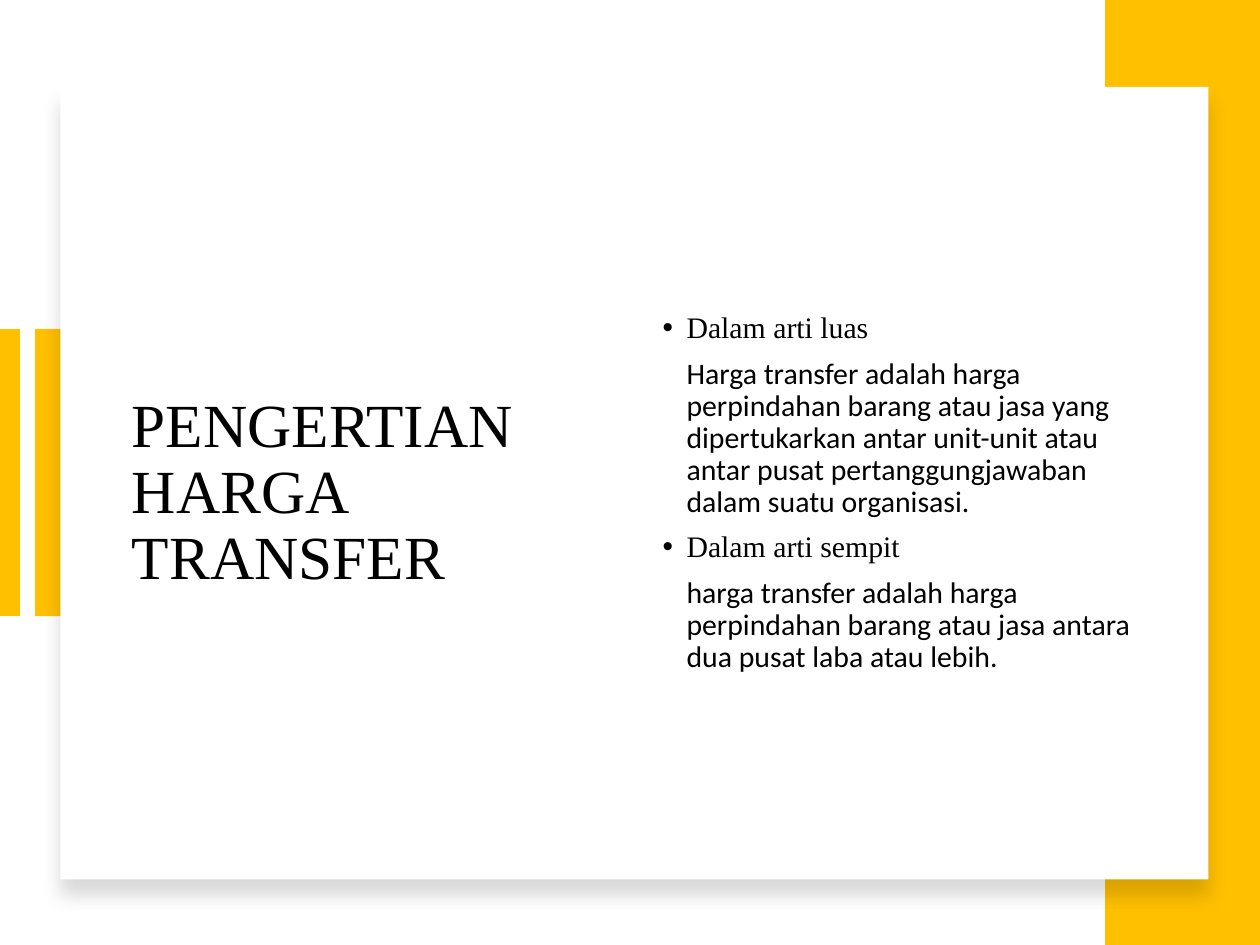
from lxml.etree import SubElement
from pptx import Presentation
from pptx.dml.color import RGBColor
from pptx.enum.shapes import MSO_CONNECTOR, MSO_SHAPE
from pptx.enum.text import MSO_ANCHOR
from pptx.oxml.ns import qn
from pptx.util import Cm, Pt

AMBER = RGBColor(0xFF, 0xC0, 0x00)
WHITE = RGBColor(0xFF, 0xFF, 0xFF)
BLACK = RGBColor(0x00, 0x00, 0x00)
SERIF, SANS = "Times New Roman", "Calibri"

TITLE = "PENGERTIAN HARGA TRANSFER"
DEFINITIONS = [
    ("Dalam arti luas",
     "Harga transfer adalah harga perpindahan barang atau jasa yang dipertukarkan "
     "antar unit-unit atau antar pusat pertanggungjawaban dalam suatu organisasi."),
    ("Dalam arti sempit",
     "harga transfer adalah harga perpindahan barang atau jasa antara dua pusat "
     "laba atau lebih."),
]


def add_rectangle(shapes, left, top, width, height, color):
    box = shapes.add_shape(MSO_SHAPE.RECTANGLE, Cm(left), Cm(top), Cm(width), Cm(height))
    box.shadow.inherit = False
    box.fill.solid()
    box.fill.fore_color.rgb = color
    box.line.fill.background()
    return box


def add_soft_shadow(box):
    """Shadow falling straight down from the box."""
    effects = box._element.spPr.find(qn("a:effectLst"))
    shadow = SubElement(effects, qn("a:outerShdw"), blurRad=str(Pt(11)),
                        dist=str(Pt(10)), dir="5400000", algn="t", rotWithShape="0")
    color = SubElement(shadow, qn("a:srgbClr"), val=str(BLACK))
    SubElement(color, qn("a:alpha"), val="15000")


def add_text_frame(page, left, top, width, height):
    box = page.shapes.add_textbox(Cm(left), Cm(top), Cm(width), Cm(height))
    frame = box.text_frame
    for name, value in {"word_wrap": True, "vertical_anchor": MSO_ANCHOR.MIDDLE}.items():
        setattr(frame, name, value)
    return frame


def write(para, text, font, size, space_before=0):
    for name, value in {"line_spacing": 0.9, "space_before": Pt(space_before)}.items():
        setattr(para, name, value)
    span = para.add_run()
    span.text = text
    for name, value in {"name": font, "size": Pt(size)}.items():
        setattr(span.font, name, value)
    span.font.color.rgb = BLACK


def set_indent(para, bullet):
    properties = para._p.get_or_add_pPr()
    indent = Cm(0.48)
    properties.set("marL", str(indent))
    properties.set("indent", str(-indent if bullet else 0))
    if bullet:
        SubElement(properties, qn("a:buFont"), typeface="Arial")
        SubElement(properties, qn("a:buChar"), char="•")
    else:
        SubElement(properties, qn("a:buNone"))


def add_left_accent(page, left, top, width, height):
    group = page.shapes.add_group_shape()
    add_rectangle(group.shapes, left + width - 0.64, top, 0.64, height, AMBER)
    stripe = group.shapes.add_connector(MSO_CONNECTOR.STRAIGHT, Cm(left), Cm(top),
                                        Cm(left), Cm(top + height))
    stripe.line.color.rgb = AMBER
    stripe.line.width = Pt(14)
    SubElement(stripe._element.spPr, qn("a:effectLst"))


def add_card(page, left, top, width, height):
    add_soft_shadow(add_rectangle(page.shapes, left, top, width, height, WHITE))
    text_top, text_height = top + 1.7, 13

    # Title column
    frame = add_text_frame(page, left + 1.19, text_top, 8.36, text_height)
    write(frame.paragraphs[0], TITLE, SERIF, 35)

    # Definitions column
    frame = add_text_frame(page, left + 11.89, text_top, 10.36, text_height)
    para = frame.paragraphs[0]
    for number, (term, meaning) in enumerate(DEFINITIONS):
        if number:
            para = frame.add_paragraph()
        write(para, term, SERIF, 17, 7.5)
        set_indent(para, bullet=True)
        para = frame.add_paragraph()
        write(para, meaning, SANS, 17, 7.5)
        set_indent(para, bullet=False)


def main():
    deck = Presentation()
    deck.slide_width, deck.slide_height = Cm(25.4), Cm(19.05)
    page = deck.slides.add_slide(deck.slide_layouts[6])
    add_left_accent(page, 0.15, 6.63, 1.2, 5.79)
    add_rectangle(page.shapes, 22.28, 0, 3.12, 19.05, AMBER)  # right band
    add_card(page, 1.22, 1.75, 23.14, 15.98)
    deck.save("out.pptx")


if __name__ == "__main__":
    main()
